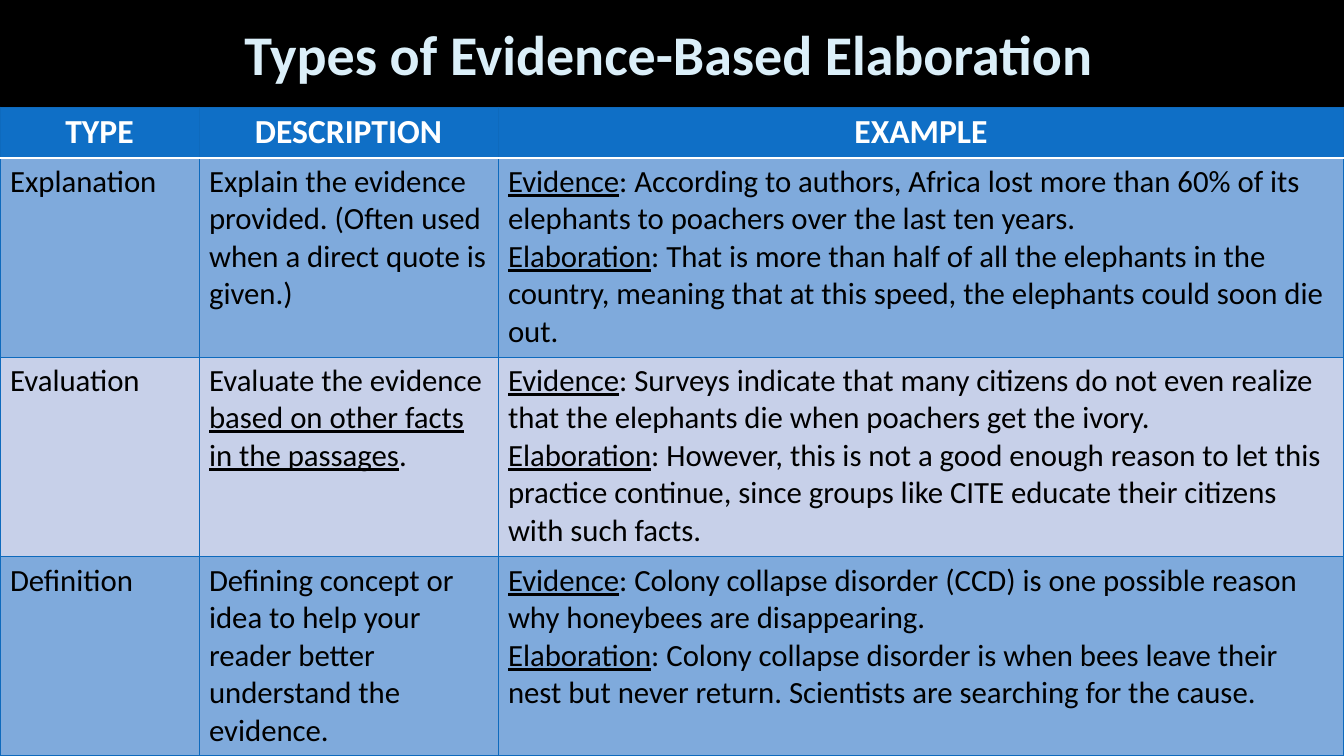
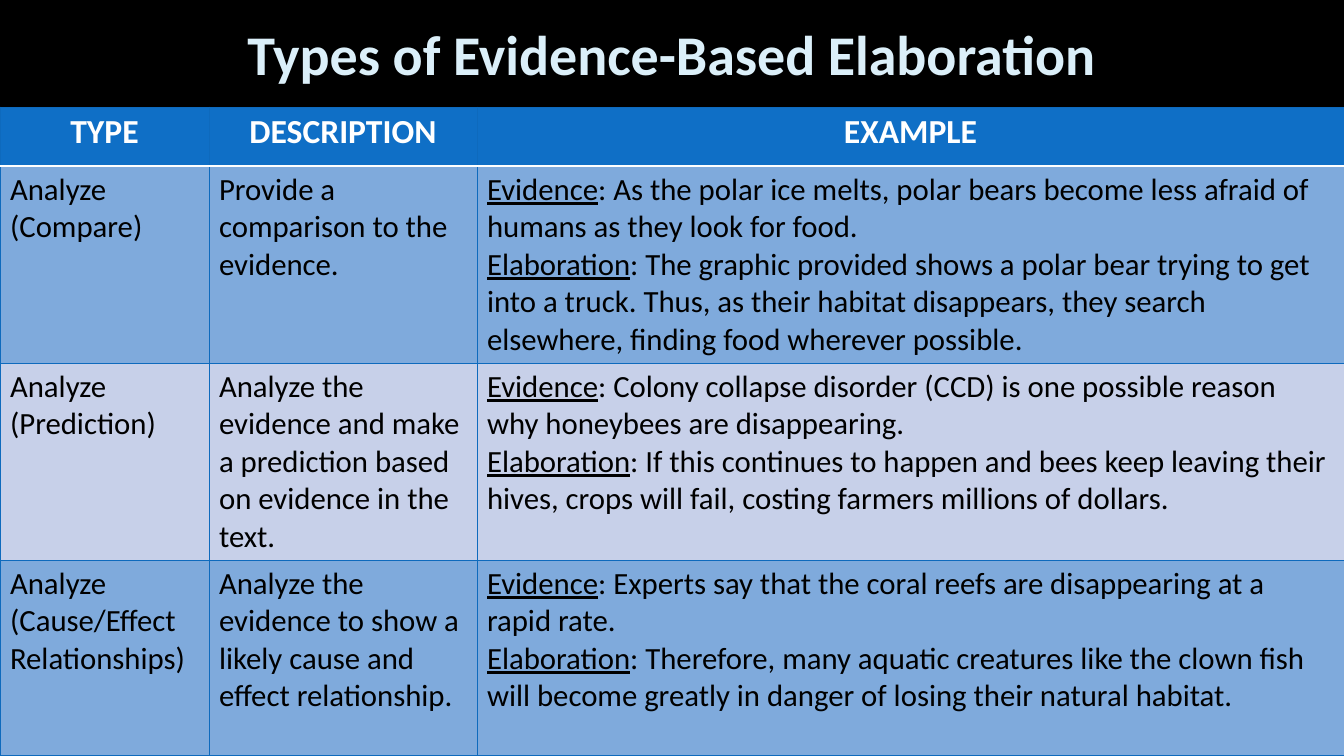
from itertools import product

from lxml.etree import SubElement
from pptx import Presentation
from pptx.dml.color import RGBColor
from pptx.enum.text import MSO_ANCHOR, PP_ALIGN
from pptx.oxml.ns import qn
from pptx.util import Pt

SLIDE_WIDTH, SLIDE_HEIGHT = 1344, 756
EMU_PER_PX = 12192000 / SLIDE_WIDTH
TITLE_WIDTH, TITLE_HEIGHT = 1141, 107
FONT = "Calibri"
TITLE = "Types of Evidence-Based Elaboration"
HEADINGS = ["TYPE", "DESCRIPTION", "EXAMPLE"]
COLORS = {
    "background": "000000",
    "title": "DBEFF9",
    "header": "0F6FC6",
    "header_text": "FFFFFF",
    "header_rule": "FFFFFF",
    "border": "0E6ABD",
    "dark_band": "7FAADC",
    "light_band": "C7D0E9",
    "body_text": "000000",
}

SLIDES = [
    {
        "title_left": 98,
        "columns": [199, 299, 846],
        "rows": [51, 199, 200, 199],
        "entries": [
            (
                "Explanation",
                "Explain the evidence provided. (Often used when a direct quote is given.)",
                "According to authors, Africa lost more than 60% of its elephants "
                "to poachers over the last ten years.",
                "That is more than half of all the elephants in the country, meaning "
                "that at this speed, the elephants could soon die out.",
            ),
            (
                "Evaluation",
                "Evaluate the evidence _based on other facts in the passages_.",
                "Surveys indicate that many citizens do not even realize that the "
                "elephants die when poachers get the ivory.",
                "However, this is not a good enough reason to let this practice "
                "continue, since groups like CITE educate their citizens with such facts.",
            ),
            (
                "Definition",
                "Defining concept or idea to help your reader better understand the evidence.",
                "Colony collapse disorder (CCD) is one possible reason why honeybees "
                "are disappearing.",
                "Colony collapse disorder is when bees leave their nest but never "
                "return. Scientists are searching for the cause.",
            ),
        ],
    },
    {
        "title_left": 101,
        "columns": [209, 268, 867],
        "rows": [59, 197, 197, 196],
        "entries": [
            (
                "Analyze (Compare)",
                "Provide a comparison to the evidence.",
                "As the polar ice melts, polar bears become less afraid of humans as "
                "they look for food.",
                "The graphic provided shows a polar bear trying to get into a truck. "
                "Thus, as their habitat disappears, they search elsewhere, finding "
                "food wherever possible.",
            ),
            (
                "Analyze (Prediction)",
                "Analyze the evidence and make a prediction based on evidence in the text.",
                "Colony collapse disorder (CCD) is one possible reason why honeybees "
                "are disappearing.",
                "If this continues to happen and bees keep leaving their hives, crops "
                "will fail, costing farmers millions of dollars.",
            ),
            (
                "Analyze (Cause/Effect Relationships)",
                "Analyze the evidence to show a likely cause and effect relationship.",
                "Experts say that the coral reefs are disappearing at a rapid rate.",
                "Therefore, many aquatic creatures like the clown fish will become "
                "greatly in danger of losing their natural habitat.",
            ),
        ],
    },
]


def px(length):
    return round(length * EMU_PER_PX)


def color(name):
    return RGBColor.from_string(COLORS[name])


def format_run(run, size, color_name, bold=False, underline=False):
    run.font.name = FONT
    run.font.size = Pt(size)
    run.font.bold = bold
    run.font.underline = underline
    run.font.color.rgb = color(color_name)


def write_marked_text(paragraph, text, size, color_name, bold=False):
    for index, part in enumerate(text.split("_")):
        run = paragraph.add_run()
        run.text = part
        format_run(run, size, color_name, bold, underline=index % 2 == 1)


def add_title(slide, left):
    box = slide.shapes.add_textbox(px(left), 0, px(TITLE_WIDTH), px(TITLE_HEIGHT))
    frame = box.text_frame
    frame.word_wrap = True
    frame.vertical_anchor = MSO_ANCHOR.MIDDLE
    frame.text = TITLE
    paragraph = frame.paragraphs[0]
    paragraph.alignment = PP_ALIGN.CENTER
    format_run(paragraph.runs[0], 40, "title", bold=True)


def add_border(cell, side, color_name, width):
    properties = cell._tc.get_or_add_tcPr()
    line = SubElement(properties, qn(f"a:ln{side}"), w=str(Pt(width)))
    fill = SubElement(line, qn("a:solidFill"))
    SubElement(fill, qn("a:srgbClr"), val=COLORS[color_name])


def style_cell(cell, row):
    for side in "LRTB":
        if (row, side) in [(0, "B"), (1, "T")]:
            add_border(cell, side, "header_rule", 1.25)
        else:
            add_border(cell, side, "border", 0.75)
    band = "dark_band" if row % 2 else "light_band"
    cell.fill.solid()
    cell.fill.fore_color.rgb = color(band if row else "header")


def fill_cell(cell, texts, is_header):
    frame = cell.text_frame
    for index, text in enumerate(texts):
        paragraph = frame.add_paragraph() if index else frame.paragraphs[0]
        if is_header:
            paragraph.alignment = PP_ALIGN.CENTER
            write_marked_text(paragraph, text, 24, "header_text", bold=True)
        else:
            write_marked_text(paragraph, text, 22, "body_text")


def add_evidence_table(slide, columns, rows, entries):
    frame = slide.shapes.add_table(
        len(rows), len(columns), 0, px(TITLE_HEIGHT), px(sum(columns)), px(sum(rows))
    )
    table = frame.table
    for column, width in zip(table.columns, columns):
        column.width = px(width)
    for row, height in zip(table.rows, rows):
        row.height = px(height)
    contents = [[[heading] for heading in HEADINGS]]
    for kind, description, evidence, elaboration in entries:
        example = [f"_Evidence_: {evidence}", f"_Elaboration_: {elaboration}"]
        contents.append([[kind], [description], example])
    for row, column in product(range(len(rows)), range(len(columns))):
        cell = table.cell(row, column)
        style_cell(cell, row)
        fill_cell(cell, contents[row][column], is_header=row == 0)


def add_elaboration_slide(presentation, content):
    slide = presentation.slides.add_slide(presentation.slide_layouts[6])
    slide.background.fill.solid()
    slide.background.fill.fore_color.rgb = color("background")
    add_title(slide, content["title_left"])
    add_evidence_table(slide, content["columns"], content["rows"], content["entries"])


def main():
    presentation = Presentation()
    presentation.slide_width = px(SLIDE_WIDTH)
    presentation.slide_height = px(SLIDE_HEIGHT)
    for content in SLIDES:
        add_elaboration_slide(presentation, content)
    presentation.save("out.pptx")


if __name__ == "__main__":
    main()
